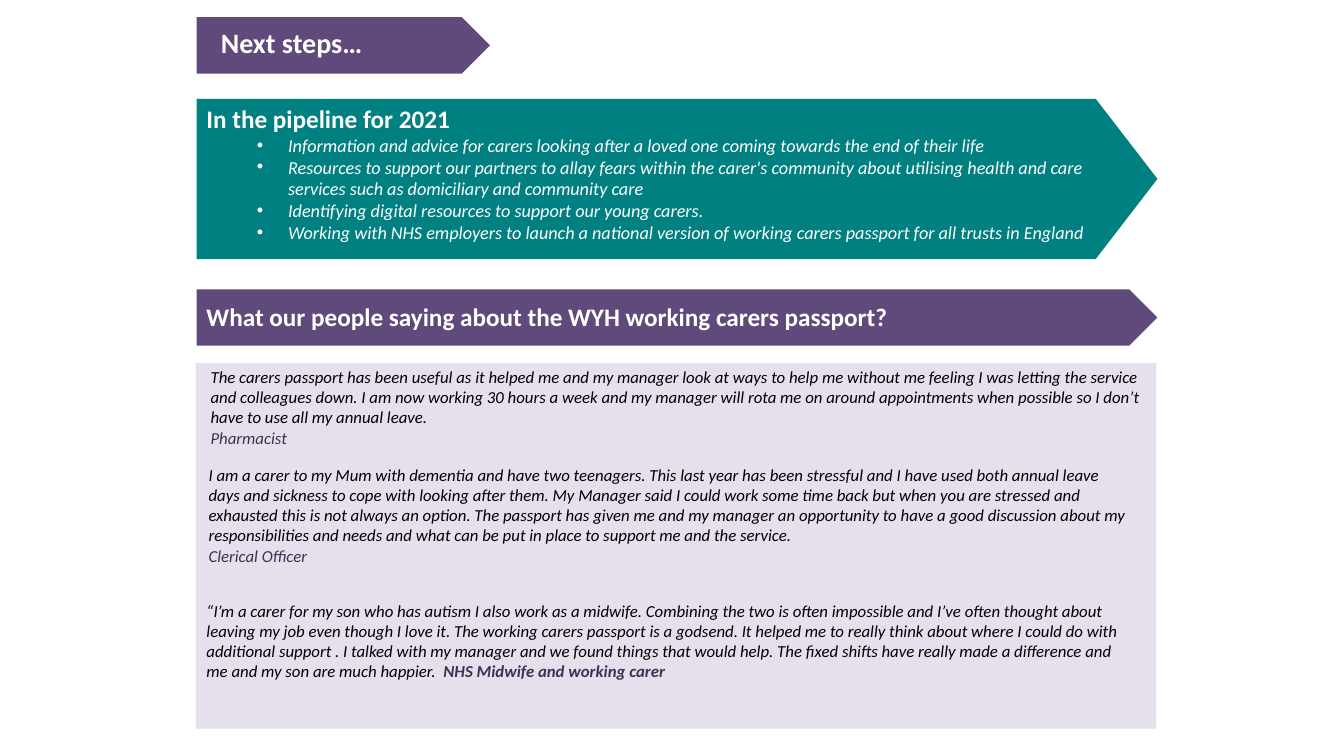
from lxml.etree import SubElement
from pptx import Presentation
from pptx.dml.color import RGBColor
from pptx.enum.shapes import MSO_SHAPE
from pptx.enum.text import MSO_ANCHOR, PP_ALIGN
from pptx.oxml.ns import qn
from pptx.util import Inches, Pt

COLORS = {
    "purple": "604A7B",
    "teal": "008080",
    "lilac": "E6E0EC",
    "plum": "403152",
    "white": "FFFFFF",
    "black": "000000",
}
HEADING = {"size": Pt(18), "bold": True, "italic": False, "color": "white"}
TITLE = {**HEADING, "size": Pt(20)}
BULLET = {"size": Pt(13), "bold": False, "italic": True, "color": "white"}
QUOTE = {"size": Pt(12), "bold": False, "italic": True, "color": "black"}
SPEAKER = {**QUOTE, "color": "plum"}
BOLD_SPEAKER = {**SPEAKER, "bold": True}

LEFT = 1.95
BANNER_WIDTH = 9.53
TEXT_WIDTH = 9.13

PIPELINE = [
    "Information and advice for carers looking after a loved one coming towards the end of their life",
    "Resources to support our partners to allay fears within the carer's community about utilising "
    "health and care services such as domiciliary and community care",
    "Identifying digital resources to support our young carers.",
    "Working with NHS employers to launch a national version of working carers passport for all "
    "trusts in England",
]
PHARMACIST = (
    "The carers passport has been useful as it helped me and my manager look at ways to help me "
    "without me feeling I was letting the service and colleagues down. I am now working 30 hours a "
    "week and my manager will rota me on around appointments when possible so I don’t have to use "
    "all my annual leave."
)
CLERICAL_OFFICER = (
    "I am a carer to my Mum with dementia and have two teenagers. This last year has been stressful "
    "and I have used both annual leave days and sickness to cope with looking after them. My Manager "
    "said I could work some time back but when you are stressed and exhausted this is not always an "
    "option. The passport has given me and my manager an opportunity to have a good discussion about "
    "my responsibilities and needs and what can be put in place to support me and the service."
)
MIDWIFE = (
    "“I’m a carer for my son who has autism I also work as a midwife. Combining the two is often "
    "impossible and I’ve often thought about leaving my job even though I love it. The working carers "
    "passport is a godsend. It helped me to really think about where I could do with additional "
    "support . I talked with my manager and we found things that would help. The fixed shifts have "
    "really made a difference and me and my son are much happier.  "
)


class SlideBuilder:
    def __init__(self, presentation, font_name="Calibri"):
        self.slide = presentation.slides.add_slide(presentation.slide_layouts[5])
        self.font_name = font_name

    def add_banner(self, left, top, width, height, color, point=0.5):
        """Add an arrow-ended block; point is the tip length over the height."""
        shape = self.slide.shapes.add_shape(
            MSO_SHAPE.PENTAGON, Inches(left), Inches(top), Inches(width), Inches(height)
        )
        shape.adjustments[0] = point
        shape.shadow.inherit = False
        shape.fill.solid()
        shape.fill.fore_color.rgb = RGBColor.from_string(COLORS[color])
        shape.line.fill.background()

    def add_title(self, left, top, width, height, text):
        title = self.slide.shapes.title
        # The title placeholder comes first, so bring it in front of its banner.
        title.element.getparent().append(title.element)
        for name, value in {"left": left, "top": top, "width": width, "height": height}.items():
            setattr(title, name, Inches(value))
        self.fill_text(title.text_frame, [[(text, TITLE)]])

    def add_text(self, left, top, width, height, paragraphs):
        box = self.slide.shapes.add_textbox(Inches(left), Inches(top), Inches(width), Inches(height))
        self.fill_text(box.text_frame, paragraphs)

    def fill_text(self, frame, paragraphs):
        """Write paragraphs, each a list of (text, style) runs."""
        frame.word_wrap = True
        frame.vertical_anchor = MSO_ANCHOR.TOP
        for index, runs in enumerate(paragraphs):
            paragraph = frame.paragraphs[0] if index == 0 else frame.add_paragraph()
            paragraph.alignment = PP_ALIGN.LEFT
            paragraph.line_spacing = 1.0
            paragraph.space_before = Pt(0)
            if runs[0][1] is BULLET:
                self.add_bullet(paragraph)
            for text, style in runs:
                run = paragraph.add_run()
                run.text = text
                self.format_font(run.font, style)

    def add_bullet(self, paragraph):
        paragraph.level = 1
        properties = paragraph._p.get_or_add_pPr()
        properties.set("marL", str(Inches(0.81)))
        properties.set("indent", str(Inches(-0.31)))
        SubElement(properties, qn("a:buFont"), typeface="Arial")
        SubElement(properties, qn("a:buChar"), char="•")

    def format_font(self, font, style):
        font.name = self.font_name
        for name, value in style.items():
            if name == "color":
                font.color.rgb = RGBColor.from_string(COLORS[value])
            else:
                setattr(font, name, value)


def main():
    presentation = Presentation()
    presentation.slide_width = Inches(13.33)
    presentation.slide_height = Inches(7.5)
    builder = SlideBuilder(presentation)

    builder.add_banner(1.94, 3.6, BANNER_WIDTH, 3.63, "lilac", point=0)
    builder.add_banner(LEFT, 2.87, BANNER_WIDTH, 0.56, "purple")
    builder.add_banner(LEFT, 0.98, BANNER_WIDTH, 1.59, "teal", point=0.385)
    builder.add_banner(LEFT, 0.17, 2.91, 0.56, "purple")

    builder.add_title(2.09, 0.2, 1.8, 0.44, "Next steps…")
    builder.add_text(
        LEFT, 0.98, TEXT_WIDTH, 1.5,
        [[("In the pipeline for 2021", HEADING)]] + [[(item, BULLET)] for item in PIPELINE],
    )
    builder.add_text(
        LEFT, 2.94, TEXT_WIDTH, 0.4,
        [[("What our people saying about the WYH working carers passport?", HEADING)]],
    )

    quotes = [
        (1.99, 3.59, 9.49, [[(PHARMACIST, QUOTE)], [("Pharmacist", SPEAKER)]]),
        (1.97, 4.56, 9.34, [[(CLERICAL_OFFICER, QUOTE)], [("Clerical Officer", SPEAKER)]]),
        (1.95, 5.91, 9.36, [[(MIDWIFE, QUOTE), ("NHS Midwife and working carer", BOLD_SPEAKER)]]),
    ]
    for left, top, width, paragraphs in quotes:
        builder.add_text(left, top, width, 1.31, paragraphs)

    presentation.save("out.pptx")


if __name__ == "__main__":
    main()
